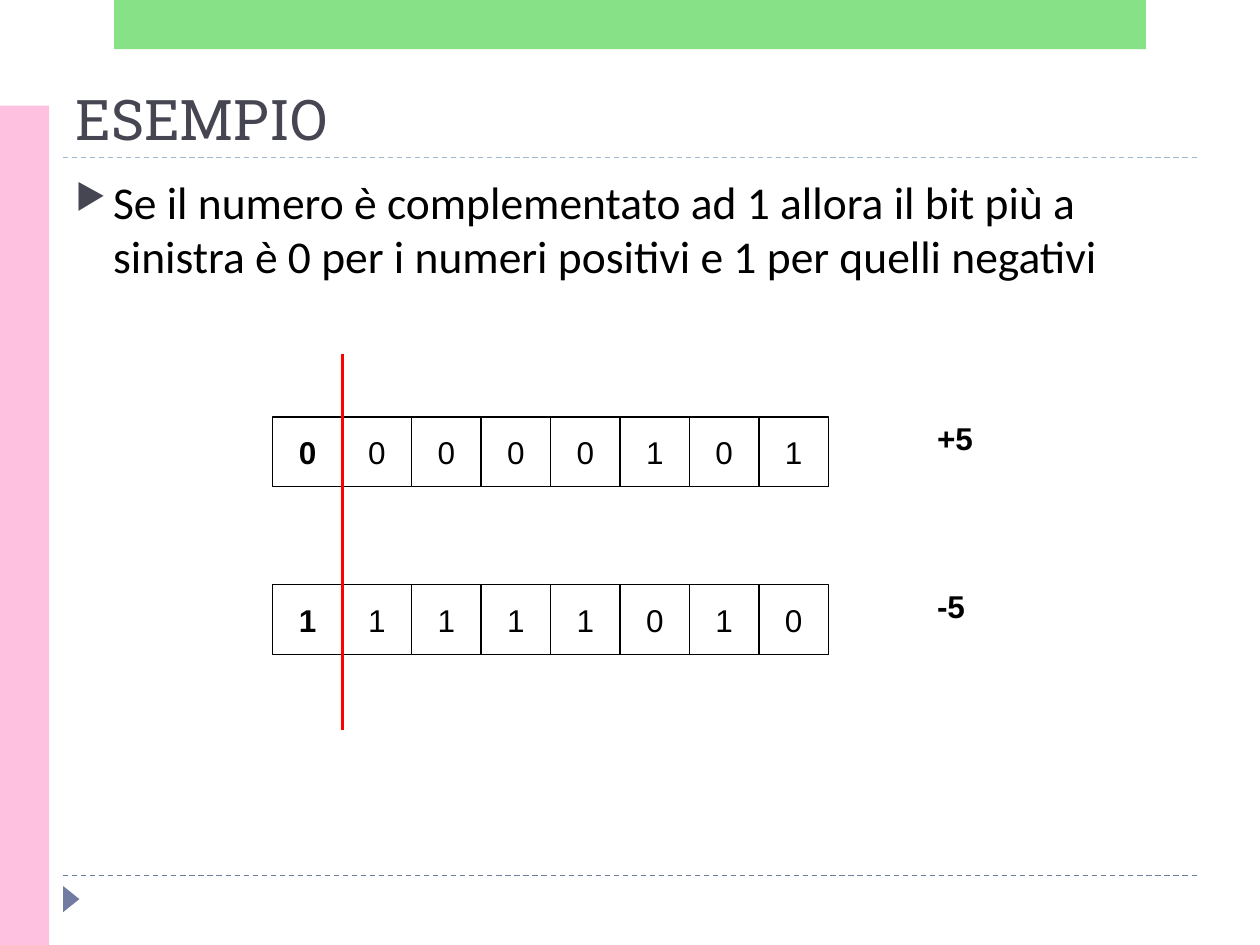
from lxml import etree
from pptx import Presentation
from pptx.dml.color import RGBColor
from pptx.enum.dml import MSO_LINE
from pptx.enum.shapes import MSO_CONNECTOR, MSO_SHAPE
from pptx.enum.text import MSO_ANCHOR, PP_ALIGN
from pptx.oxml.ns import qn
from pptx.util import Cm, Pt

RECTANGLE, TRIANGLE = MSO_SHAPE.RECTANGLE, MSO_SHAPE.ISOSCELES_TRIANGLE
STRAIGHT, DASH = MSO_CONNECTOR.STRAIGHT, MSO_LINE.DASH
TOP, MIDDLE, BOTTOM = MSO_ANCHOR.TOP, MSO_ANCHOR.MIDDLE, MSO_ANCHOR.BOTTOM
LEFT, CENTER = PP_ALIGN.LEFT, PP_ALIGN.CENTER

BLACK = RGBColor(0x00, 0x00, 0x00)
WHITE = RGBColor(0xFF, 0xFF, 0xFF)
RED = RGBColor(0xFF, 0x00, 0x00)
SLATE = RGBColor(0x46, 0x46, 0x53)
INDIGO = RGBColor(0x72, 0x7C, 0xA3)
PALE_BLUE = RGBColor(0x9F, 0xB8, 0xCD)
PINK = RGBColor(0xFF, 0xC1, 0xE0)
GREEN = RGBColor(0x62, 0xD8, 0x62)

TITLE = "ESEMPIO"
BODY = ("Se il numero è complementato ad 1 allora il bit più a sinistra "
        "è 0 per i numeri positivi e 1 per quelli negativi")
NUMBERS = [("+5", "00000101", 8.41), ("-5", "11111010", 11.79)]
RULES = [(17.65, INDIGO), (3.18, PALE_BLUE)]

MARGIN, CONTENT_WIDTH = 1.27, 22.86
BITS_LEFT, BIT_SIZE = 5.5, 1.4
LABEL_LEFT, LABEL_RISE = 18.64, 0.08
SIGN_RISE, SIGN_LENGTH = 1.27, 4.2


def add_line(shapes, start, end, color, width, dash=None):
    line = shapes.add_connector(STRAIGHT, *map(Cm, start + end))
    line.line.color.rgb = color
    line.line.width = Pt(width)
    if dash:
        line.line.dash_style = dash
    etree.SubElement(line._element.spPr, qn("a:effectLst"))


def add_block(shapes, kind, place, fill, outline=None):
    block = shapes.add_shape(kind, *map(Cm, place))
    block.shadow.inherit = False
    block.fill.solid()
    block.fill.fore_color.rgb = fill
    if outline is None:
        block.line.fill.background()
    else:
        block.line.color.rgb = outline
        block.line.width = Pt(0.75)
    return block


def add_bullet(para):
    properties = para._p.get_or_add_pPr()
    properties.set("marL", str(Cm(0.76)))
    properties.set("indent", str(-Cm(0.76)))
    color = etree.SubElement(properties, qn("a:buClr"))
    etree.SubElement(color, qn("a:srgbClr"), val=str(SLATE))
    etree.SubElement(properties, qn("a:buSzPct"), val="76000")
    etree.SubElement(properties, qn("a:buChar"), char="▶")


def write(box, text, size=18, font="Arial", color=BLACK, bold=False,
          align=LEFT, anchor=TOP, wrap=False, bullet=False):
    frame = box.text_frame
    frame.word_wrap = wrap
    frame.vertical_anchor = anchor
    para = frame.paragraphs[0]
    para.alignment = align
    if bullet:
        add_bullet(para)
    span = para.add_run()
    span.text = text
    span.font.size = Pt(size)
    span.font.name = font
    span.font.bold = bold
    span.font.color.rgb = color


def add_text(shapes, place, text, **style):
    write(shapes.add_textbox(*map(Cm, place)), text, **style)


def add_number(page, label, bits, top):
    shapes = page.shapes.add_group_shape().shapes
    add_text(shapes, (LABEL_LEFT, top - LABEL_RISE, 1.55, 1.27), label, bold=True)
    for index, bit in enumerate(bits):
        place = (BITS_LEFT + index * BIT_SIZE, top, BIT_SIZE, BIT_SIZE)
        cell = add_block(shapes, RECTANGLE, place, WHITE, BLACK)
        write(cell, bit, bold=index == 0, align=CENTER, anchor=MIDDLE)
    sign_x, sign_top = BITS_LEFT + BIT_SIZE, top - SIGN_RISE
    add_line(shapes, (sign_x, sign_top), (sign_x, sign_top + SIGN_LENGTH), RED, 2)


def main():
    deck = Presentation()
    deck.slide_width, deck.slide_height = Cm(25.4), Cm(19.05)
    page = deck.slides.add_slide(deck.slide_layouts[6])
    shapes = page.shapes

    for y, color in RULES:
        add_line(shapes, (MARGIN, y), (MARGIN + CONTENT_WIDTH, y), color, 0.75, DASH)
    marker = add_block(shapes, TRIANGLE, (1.17, 17.96, 0.53, 0.33), INDIGO)
    marker.rotation = 90
    add_block(shapes, RECTANGLE, (0, 2.13, 0.99, 16.92), PINK)
    banner = add_block(shapes, RECTANGLE, (2.3, 0, 20.8, 0.99), GREEN)
    tint = banner._element.spPr.find(qn("a:solidFill"))[0]
    etree.SubElement(tint, qn("a:alpha"), val="76000")

    add_text(shapes, (MARGIN, 1.4, CONTENT_WIDTH, 1.78), TITLE, size=32,
             font="Roboto Slab", color=SLATE, anchor=BOTTOM, wrap=True)
    add_text(shapes, (MARGIN, 3.38, CONTENT_WIDTH, 13.72), BODY, size=26,
             font="Calibri", wrap=True, bullet=True)
    for label, bits, top in NUMBERS:
        add_number(page, label, bits, top)

    deck.save("out.pptx")


if __name__ == "__main__":
    main()
